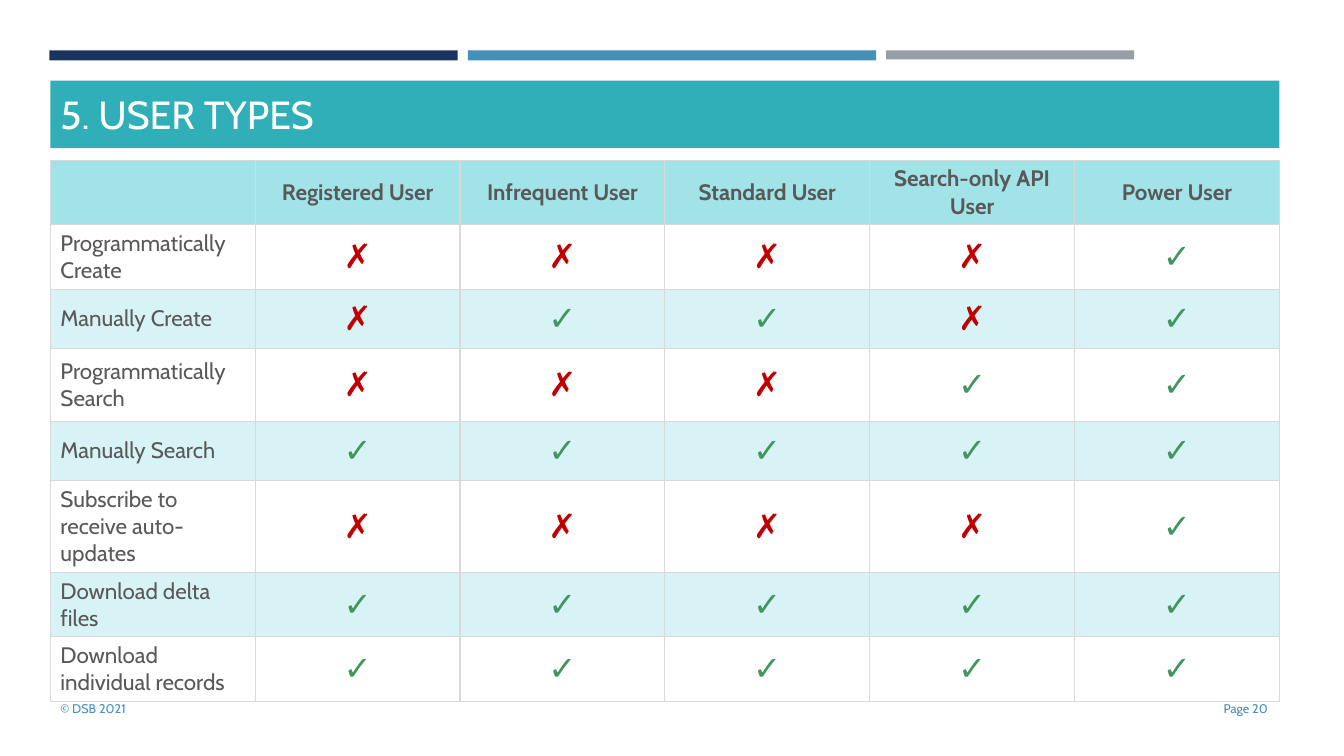
"""Build the user types slide with its permission table."""
from lxml.etree import SubElement
from pptx import Presentation
from pptx.dml.color import RGBColor
from pptx.enum.shapes import MSO_SHAPE
from pptx.enum.text import MSO_ANCHOR, PP_ALIGN
from pptx.oxml.ns import qn
from pptx.util import Inches, Pt

NAVY = RGBColor(0x1A, 0x32, 0x60)
BLUE = RGBColor(0x45, 0x90, 0xB8)
SILVER = RGBColor(0x96, 0x9F, 0xA7)
TEAL = RGBColor(0x30, 0xAF, 0xB8)
HEADER_TEAL = RGBColor(0xA2, 0xE3, 0xE8)
PALE_TEAL = RGBColor(0xD7, 0xF3, 0xF5)
WHITE = RGBColor(0xFF, 0xFF, 0xFF)
GREY = RGBColor(0x59, 0x59, 0x59)
BORDER = RGBColor(0xD9, 0xD9, 0xD9)
RED = RGBColor(0xC0, 0x00, 0x00)
GREEN = RGBColor(0x42, 0x95, 0x5F)

USERS = ["Registered User", "Infrequent User", "Standard User",
         "Search-only API User", "Power User"]
PERMISSIONS = [
    ("Programmatically Create", "✗✗✗✗✓", 0.64),
    ("Manually Create", "✗✓✓✗✓", 0.59),
    ("Programmatically Search", "✗✗✗✓✓", 0.72),
    ("Manually Search", "✓✓✓✓✓", 0.59),
    ("Subscribe to receive auto-updates", "✗✗✗✗✓", 0.91),
    ("Download delta files", "✓✓✓✓✓", 0.64),
    ("Download individual records", "✓✓✓✓✓", 0.64),
]


def write(frame, text, size, color, font="Cabin", align=PP_ALIGN.LEFT, bold=False):
    paragraph = frame.paragraphs[0]
    paragraph.text = text
    paragraph.alignment = align
    for span in paragraph.runs:
        span.font.size = Pt(size)
        span.font.name = font
        span.font.bold = bold
        span.font.color.rgb = color


def add_borders(cell):
    properties = cell._tc.get_or_add_tcPr()
    for side in ("a:lnL", "a:lnR", "a:lnT", "a:lnB"):
        line = SubElement(properties, qn(side), w=str(Pt(1)))
        fill = SubElement(line, qn("a:solidFill"))
        SubElement(fill, qn("a:srgbClr"), val=str(BORDER))


deck = Presentation()
deck.slide_width, deck.slide_height = Inches(13.33), Inches(7.5)
page = deck.slides.add_slide(deck.slide_layouts[5])

for left, top, width, height, color in [
    (0.49, 0.5, 4.05, 0.1, NAVY),
    (8.79, 0.5, 2.46, 0.09, SILVER),
    (4.64, 0.5, 4.05, 0.1, BLUE),
    (0.5, 0.8, 12.19, 0.67, TEAL),
]:
    bar = page.shapes.add_shape(MSO_SHAPE.RECTANGLE, Inches(left), Inches(top),
                                Inches(width), Inches(height))
    bar.shadow.inherit = False
    bar.fill.solid()
    bar.fill.fore_color.rgb = color
    bar.line.fill.background()

title = page.shapes.title
title.left, title.top = Inches(0.5), Inches(0.79)
title.width, title.height = Inches(10.92), Inches(0.67)
title.text_frame.vertical_anchor = MSO_ANCHOR.MIDDLE
write(title.text_frame, "5. USER TYPES", 28, WHITE)
title.element.getparent().append(title.element)

for text, left, width, align in [
    ("Page 20 ", 11.55, 1.15, PP_ALIGN.RIGHT),
    ("© DSB 2021", 0.5, 7.56, PP_ALIGN.LEFT),
]:
    box = page.shapes.add_textbox(Inches(left), Inches(6.83), Inches(width), Inches(0.4))
    box.text_frame.word_wrap = True
    box.text_frame.vertical_anchor = MSO_ANCHOR.MIDDLE
    write(box.text_frame, text, 9, BLUE, align=align)

heights = [0.64] + [height for label, marks, height in PERMISSIONS]
rows = [["", *USERS]] + [[label, *marks] for label, marks, height in PERMISSIONS]
table = page.shapes.add_table(len(rows), len(rows[0]), Inches(0.5), Inches(1.59),
                              Inches(12.19), Inches(sum(heights))).table

for row_index, row in enumerate(rows):
    table.rows[row_index].height = Inches(heights[row_index])
    for column_index, text in enumerate(row):
        cell = table.cell(row_index, column_index)
        cell.vertical_anchor = MSO_ANCHOR.MIDDLE
        add_borders(cell)
        if row_index % 2:
            cell.fill.background()
        else:
            cell.fill.solid()
            cell.fill.fore_color.rgb = PALE_TEAL if row_index else HEADER_TEAL
        if row_index == 0:
            write(cell.text_frame, text, 16, GREY, align=PP_ALIGN.CENTER, bold=True)
        elif column_index == 0:
            write(cell.text_frame, text, 16, GREY)
        else:
            write(cell.text_frame, text, 24, GREEN if text == "✓" else RED,
                  font="Arial", align=PP_ALIGN.CENTER)

deck.save("out.pptx")
